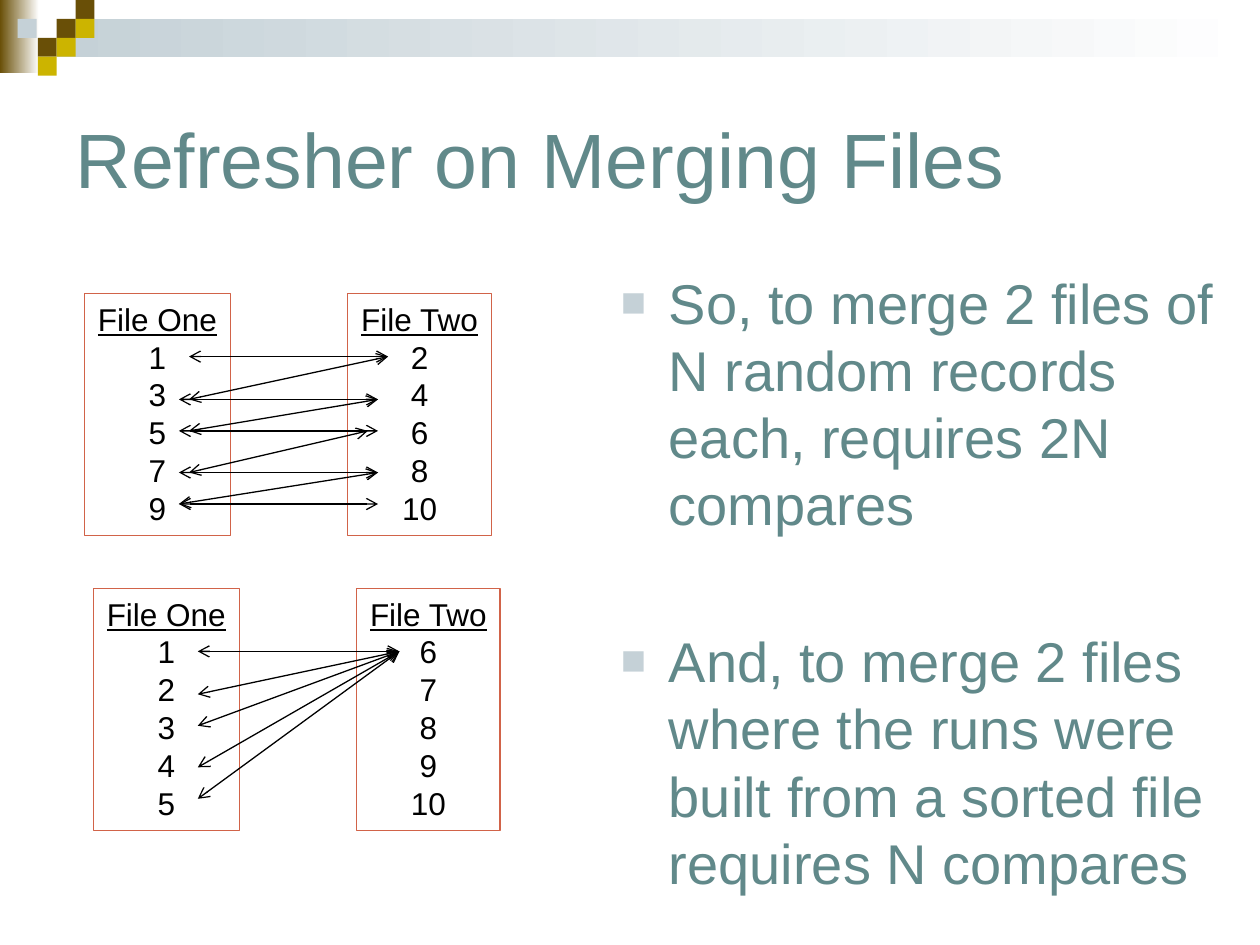
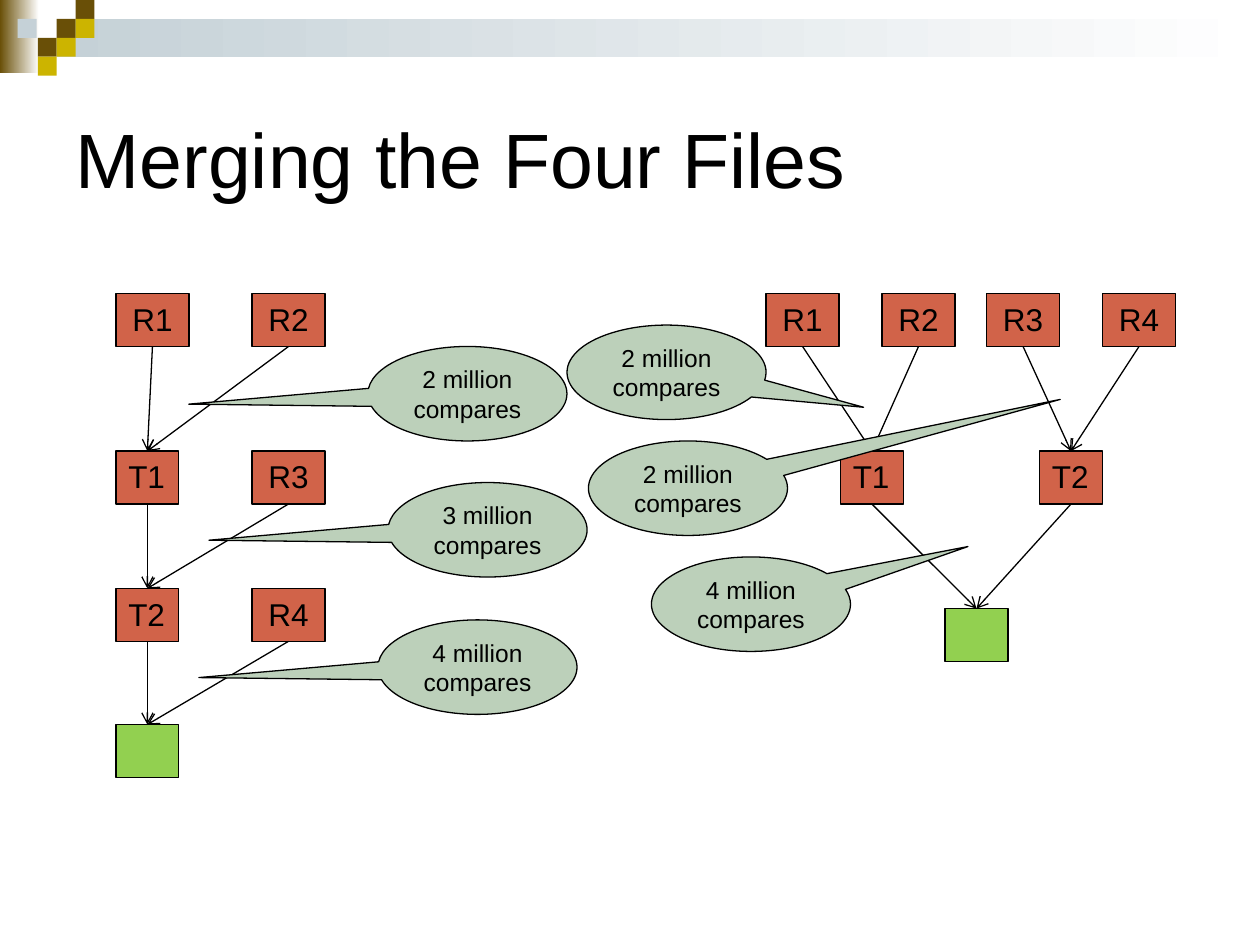
from dataclasses import dataclass
from typing import NamedTuple

from lxml.etree import SubElement
from pptx import Presentation
from pptx.dml.color import RGBColor
from pptx.enum.shapes import MSO_CONNECTOR as Connector, MSO_SHAPE as Shape
from pptx.enum.text import MSO_ANCHOR as Anchor, MSO_AUTO_SIZE as AutoSize, PP_ALIGN as Align
from pptx.oxml.ns import qn
from pptx.util import Inches, Pt

FONT = "Arial"
TITLE_ONLY = 5
BOTTOM, TOP = 2, 0
COLORS = {
    "text": "000000", "teal": "61898A", "brown": "694F07", "gold": "CCB400",
    "mist": "C5D1D7", "white": "FFFFFF", "brick": "D16349", "result": "92D050",
    "sage": "BCD0BA",
}

# Corner mosaic shared by all slides: left, top, colour
TILE = 0.15
TILES = [
    (0.45, 0.15, "brown"), (0.6, 0, "brown"), (0.6, 0.15, "gold"),
    (0.3, 0.3, "brown"), (0.14, 0.15, "mist"), (0.45, 0.3, "gold"),
    (0.3, 0.45, "gold"),
]

# Heights of the records that the compare arrows point at
RECORD_Y = [2.83, 3.17, 3.42, 3.75, 4]
SORTED_DROP = 2.34


class Compare(NamedTuple):
    left: float
    left_record: int
    right: float
    right_record: int


RANDOM_COMPARES = [
    Compare(1.5, 0, 3.08, 0), Compare(1.5, 1, 3.08, 0),
    Compare(1.42, 1, 3, 1), Compare(1.5, 2, 3, 1),
    Compare(1.5, 3, 2.92, 2), Compare(1.42, 2, 3, 2),
    Compare(1.42, 3, 3, 3), Compare(1.42, 4, 3, 3), Compare(1.42, 4, 3, 4),
]
SORTED_COMPARES = [Compare(1.57, record, 3.17, 0) for record in range(len(RECORD_Y))]


class RecordFile(NamedTuple):
    heading: str
    records: range
    left: float
    top: float
    width: float


RECORD_FILES = [
    RecordFile("File One", range(1, 10, 2), 0.67, 2.33, 1.16),
    RecordFile("File Two", range(2, 11, 2), 2.76, 2.33, 1.14),
    RecordFile("File One", range(1, 6), 0.74, 4.67, 1.16),
    RecordFile("File Two", range(6, 11), 2.83, 4.67, 1.14),
]


class MergeNode(NamedTuple):
    label: str
    left: float
    top: float


class Note(NamedTuple):
    millions: int
    left: float
    top: float
    tip_x: float
    tip_y: float


@dataclass
class MergeTree:
    """Nodes without a label are the final result; edges are pairs of labels."""
    nodes: list[MergeNode]
    edges: list[tuple[str, str]]


BALANCED = MergeTree(
    [MergeNode("R1", 6.08, 2.33), MergeNode("R2", 7, 2.33),
     MergeNode("R3", 7.83, 2.33), MergeNode("R4", 8.75, 2.33),
     MergeNode("T1", 6.67, 3.58), MergeNode("T2", 8.25, 3.58),
     MergeNode("", 7.5, 4.83)],
    [("R1", "T1"), ("R2", "T1"), ("R3", "T2"), ("R4", "T2"), ("T1", ""), ("T2", "")],
)
SEQUENTIAL = MergeTree(
    [MergeNode("R1", 0.92, 2.33), MergeNode("R2", 2, 2.33),
     MergeNode("T1", 0.92, 3.58), MergeNode("R3", 2, 3.58),
     MergeNode("T2", 0.92, 4.67), MergeNode("R4", 2, 4.67),
     MergeNode("", 0.92, 5.75)],
    [("R1", "T1"), ("R2", "T1"), ("T1", "T2"), ("R3", "T2"), ("T2", ""), ("R4", "")],
)
NOTES = [
    Note(2, 2.92, 2.75, -1.4, 0.11), Note(4, 3, 4.92, -1.4, 0.11),
    Note(3, 3.08, 3.83, -1.4, 0.11), Note(2, 4.5, 2.58, 0.99, 0.37),
    Note(2, 4.67, 3.5, 1.87, -0.94), Note(4, 5.17, 4.42, 1.09, -0.61),
]


def rgb(color: str) -> RGBColor:
    return RGBColor.from_string(COLORS[color])


def write(frame, *lines: str, size: float = 18, color: str = "text",
          align=Align.LEFT, anchor=Anchor.TOP, wrap: bool = True,
          underline_first: bool = False) -> None:
    frame.word_wrap = wrap
    frame.vertical_anchor = anchor
    for index, line in enumerate(lines):
        paragraph = frame.paragraphs[0] if index == 0 else frame.add_paragraph()
        paragraph.alignment = align
        run = paragraph.add_run()
        run.text = line
        run.font.name = FONT
        run.font.size = Pt(size)
        run.font.color.rgb = rgb(color)
        if underline_first and index == 0:
            run.font.underline = True


def add_block(slide, left: float, top: float, width: float, height: float,
              fill: str | None = None, line: str | None = None, kind=Shape.RECTANGLE):
    block = slide.shapes.add_shape(
        kind, Inches(left), Inches(top), Inches(width), Inches(height))
    block.shadow.inherit = False
    if fill:
        block.fill.solid()
        block.fill.fore_color.rgb = rgb(fill)
    else:
        block.fill.background()
    if line:
        block.line.color.rgb = rgb(line)
        block.line.width = Pt(0.75)
    else:
        block.line.fill.background()
    return block


def add_fade(slide, left: float, top: float, width: float, height: float, color: str) -> None:
    """Draw a band that fades from the colour to white, left to right."""
    fill = add_block(slide, left, top, width, height).fill
    fill.gradient()
    fill.gradient_angle = 0
    for stop, position, name in zip(fill.gradient_stops, (0, 1), (color, "white")):
        stop.position = position
        stop.color.rgb = rgb(name)


def add_arrow(slide, start: tuple[float, float] = (0, 0), end: tuple[float, float] = (0, 0),
              both_ends: bool = False):
    arrow = slide.shapes.add_connector(
        Connector.STRAIGHT, *(Inches(value) for value in (*start, *end)))
    arrow.line.color.rgb = rgb("text")
    arrow.line.width = Pt(0.75)
    outline = arrow.line._get_or_add_ln()
    for tag in ("a:headEnd", "a:tailEnd") if both_ends else ("a:tailEnd",):
        SubElement(outline, qn(tag), type="arrow")
    SubElement(outline.getparent(), qn("a:effectLst"))
    return arrow


def add_titled_slide(deck, title: str, color: str):
    slide = deck.slides.add_slide(deck.slide_layouts[TITLE_ONLY])
    add_fade(slide, 0, 0, 0.31, 0.58, "brown")
    add_fade(slide, 0.45, 0.15, 9.55, 0.3, "mist")
    for left, top, tile_color in TILES:
        add_block(slide, left, top, TILE, TILE, tile_color)
    heading = slide.shapes.title
    heading.left, heading.top = Inches(0.5), Inches(0.5)
    heading.width, heading.height = Inches(9), Inches(1.5)
    heading.text_frame.auto_size = AutoSize.NONE
    write(heading.text_frame, title, size=44, color=color, anchor=Anchor.MIDDLE)
    return slide


def add_bullets(slide, *points: str) -> None:
    body = slide.shapes.add_textbox(Inches(4.83), Inches(2.08), Inches(4.92), Inches(4.25))
    write(body.text_frame, *points, size=32, color="teal")
    for index, paragraph in enumerate(body.text_frame.paragraphs):
        paragraph.space_before = Pt(51.2 if index else 0)
        props = paragraph._p.get_or_add_pPr()
        props.set("marL", str(Inches(0.38)))
        props.set("indent", str(-Inches(0.38)))
        bullet_color = SubElement(props, qn("a:buClr"))
        SubElement(bullet_color, qn("a:srgbClr"), val=COLORS["mist"])
        SubElement(props, qn("a:buSzPct"), val="75000")
        SubElement(props, qn("a:buFont"), typeface=FONT)
        SubElement(props, qn("a:buChar"), char="■")


def add_record_file(slide, file: RecordFile) -> None:
    box = add_block(slide, file.left, file.top, file.width, 1.92, line="brick")
    write(box.text_frame, file.heading, *map(str, file.records),
          align=Align.CENTER, wrap=False, underline_first=True)
    box.text_frame.auto_size = AutoSize.SHAPE_TO_FIT_TEXT


def add_compares(slide, compares: list[Compare], drop: float = 0) -> None:
    for compare in compares:
        add_arrow(slide, (compare.left, RECORD_Y[compare.left_record] + drop),
                  (compare.right, RECORD_Y[compare.right_record] + drop), both_ends=True)


def add_merge_tree(slide, tree: MergeTree) -> None:
    boxes = {}
    for node in tree.nodes:
        is_run = node.label.startswith("R")
        box = add_block(slide, node.left, node.top, 0.58 if is_run else 0.5, 0.42,
                        "brick" if node.label else "result", "text")
        if node.label:
            write(box.text_frame, node.label, align=Align.CENTER if is_run else Align.LEFT)
        boxes[node.label] = box
    for source, target in tree.edges:
        arrow = add_arrow(slide)
        arrow.begin_connect(boxes[source], BOTTOM)
        arrow.end_connect(boxes[target], TOP)


def add_note(slide, note: Note) -> None:
    callout = add_block(slide, note.left, note.top, 1.58, 0.75, "sage", "text",
                        Shape.OVAL_CALLOUT)
    callout.adjustments[0] = note.tip_x
    callout.adjustments[1] = note.tip_y
    write(callout.text_frame, f"{note.millions} million compares", size=14,
          align=Align.CENTER, anchor=Anchor.MIDDLE)


def main() -> None:
    deck = Presentation()
    deck.slide_width, deck.slide_height = Inches(10), Inches(7.5)

    refresher = add_titled_slide(deck, "Refresher on Merging Files", "teal")
    add_bullets(
        refresher,
        "So, to merge 2 files of N random records each, requires 2N compares",
        "And, to merge 2 files where the runs were built from a sorted file requires N compares",
    )
    for file in RECORD_FILES:
        add_record_file(refresher, file)
    add_compares(refresher, RANDOM_COMPARES)
    add_compares(refresher, SORTED_COMPARES, SORTED_DROP)

    four_files = add_titled_slide(deck, "Merging the Four Files", "text")
    for tree in (BALANCED, SEQUENTIAL):
        add_merge_tree(four_files, tree)
    for note in NOTES:
        add_note(four_files, note)

    deck.save("out.pptx")


if __name__ == "__main__":
    main()
